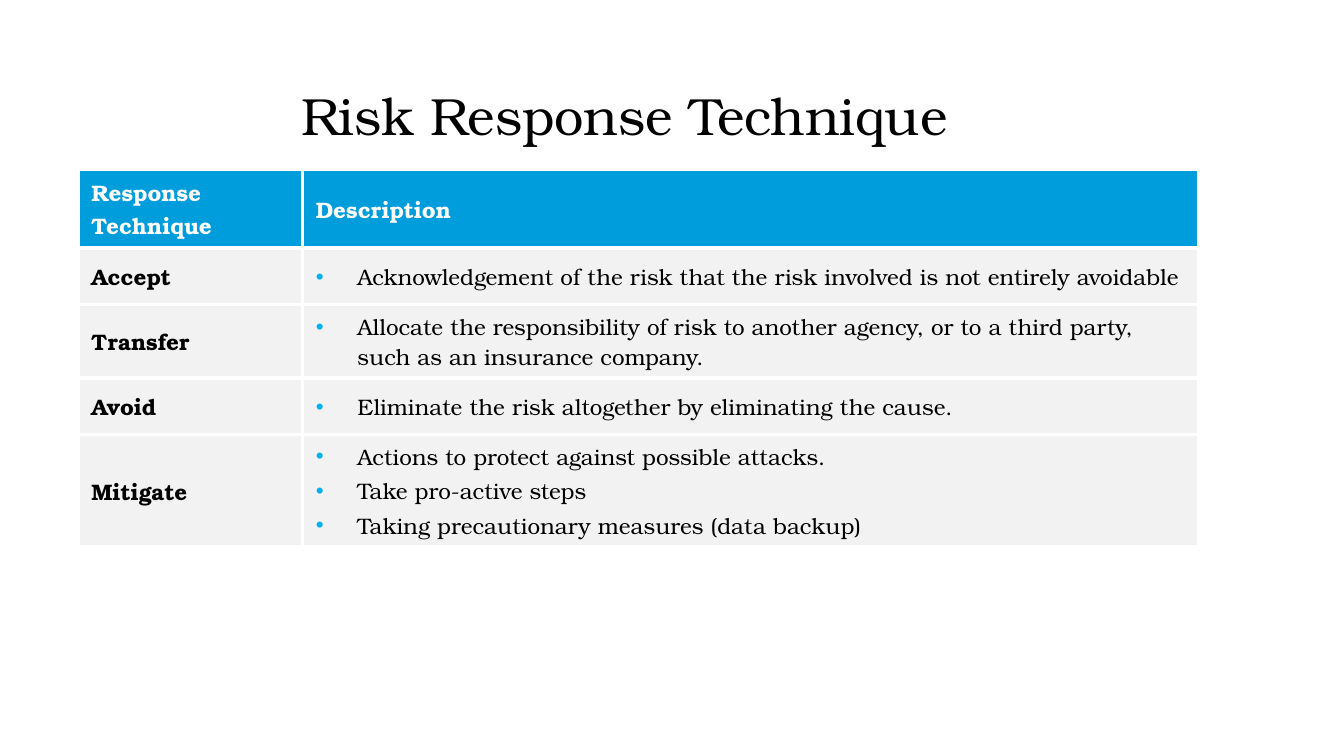
"""Build the risk response technique slide."""
from lxml.etree import SubElement
from pptx import Presentation
from pptx.dml.color import RGBColor
from pptx.enum.text import MSO_ANCHOR, PP_ALIGN
from pptx.oxml.ns import qn
from pptx.util import Inches, Pt

FONT = "TeX Gyre Bonum"
COLORS = {
    "head": "009DDC",
    "body": "F2F2F2",
    "bullet": "00B0F0",
    "white": "FFFFFF",
    "black": "000000",
}
HEADS = ["Response Technique", "Description"]
RISKS = {
    "Accept": ["Acknowledgement of the risk that the risk involved is not entirely avoidable"],
    "Transfer": ["Allocate the responsibility of risk to another agency, or to a third party, "
                 "such as an insurance company."],
    "Avoid": ["Eliminate the risk altogether by eliminating the cause."],
    "Mitigate": [
        "Actions to protect against possible attacks.",
        "Take pro-active steps",
        "Taking precautionary measures (data backup)",
    ],
}


def style(para, size, color, bold=False):
    """Format every run of a paragraph."""
    for run in para.runs:
        font = run.font
        font.name, font.size, font.bold = FONT, Pt(size), bold
        font.color.rgb = RGBColor.from_string(COLORS[color])


def add_bullet(para):
    """Give a paragraph a hanging coloured bullet."""
    props = para._p.get_or_add_pPr()
    props.set("marL", str(Inches(0.31)))
    props.set("indent", str(-Inches(0.31)))
    color = SubElement(props, qn("a:buClr"))
    SubElement(color, qn("a:srgbClr"), val=COLORS["bullet"])
    SubElement(props, qn("a:buFont"), typeface="Arial")
    SubElement(props, qn("a:buChar"), char="•")


def add_border(cell):
    """Draw white lines on all sides of a cell."""
    props = cell._tc.get_or_add_tcPr()
    for place, side in enumerate(("lnL", "lnR", "lnT", "lnB")):
        line = SubElement(props, qn(f"a:{side}"), w=str(Pt(2.25)))
        fill = SubElement(line, qn("a:solidFill"))
        SubElement(fill, qn("a:srgbClr"), val=COLORS["white"])
        props.insert(place, line)


def fill_cell(cell, lines, fill, color, bold=False, bullets=False):
    """Write lines of text into a filled and bordered cell."""
    cell.fill.solid()
    cell.fill.fore_color.rgb = RGBColor.from_string(COLORS[fill])
    add_border(cell)
    cell.vertical_anchor = MSO_ANCHOR.MIDDLE
    cell.text_frame.text = "\n".join(lines)
    for index, para in enumerate(cell.text_frame.paragraphs):
        if index:
            para.space_before = Pt(2.4)
        if bullets:
            add_bullet(para)
        style(para, 12, color, bold)


def set_title(slide, text):
    """Place and format the slide title."""
    title = slide.shapes.title
    title.left, title.top = Inches(1.33), Inches(0.48)
    title.width, title.height = Inches(6.5), Inches(0.75)
    frame = title.text_frame
    frame.text = text
    frame.margin_left = Inches(0.23)
    frame.vertical_anchor = MSO_ANCHOR.MIDDLE
    para = frame.paragraphs[0]
    para.alignment = PP_ALIGN.CENTER
    style(para, 28, "black")


def add_grid(slide):
    """Add the table of techniques and descriptions."""
    shape = slide.shapes.add_table(len(RISKS) + 1, len(HEADS), Inches(0.58),
                                   Inches(1.26), Inches(8.34), Inches(2.18))
    table = shape.table
    for column, width in zip(table.columns, (1.67, 6.67)):
        column.width = Inches(width)
    for index, row in enumerate(table.rows):
        row.height = Inches(0.42 if index else 0.5)
    for column, head in enumerate(HEADS):
        fill_cell(table.cell(0, column), [head], "head", "white", bold=True)
    for row, (name, lines) in enumerate(RISKS.items(), 1):
        fill_cell(table.cell(row, 0), [name], "body", "black", bold=True)
        fill_cell(table.cell(row, 1), lines, "body", "black", bullets=True)


def main():
    """Build and save the slide."""
    deck = Presentation()
    deck.slide_width = Inches(10)
    deck.slide_height = deck.slide_width * 9 // 16
    slide = deck.slides.add_slide(deck.slide_layouts[5])
    set_title(slide, "Risk Response Technique")
    add_grid(slide)
    deck.save("out.pptx")


if __name__ == "__main__":
    main()
